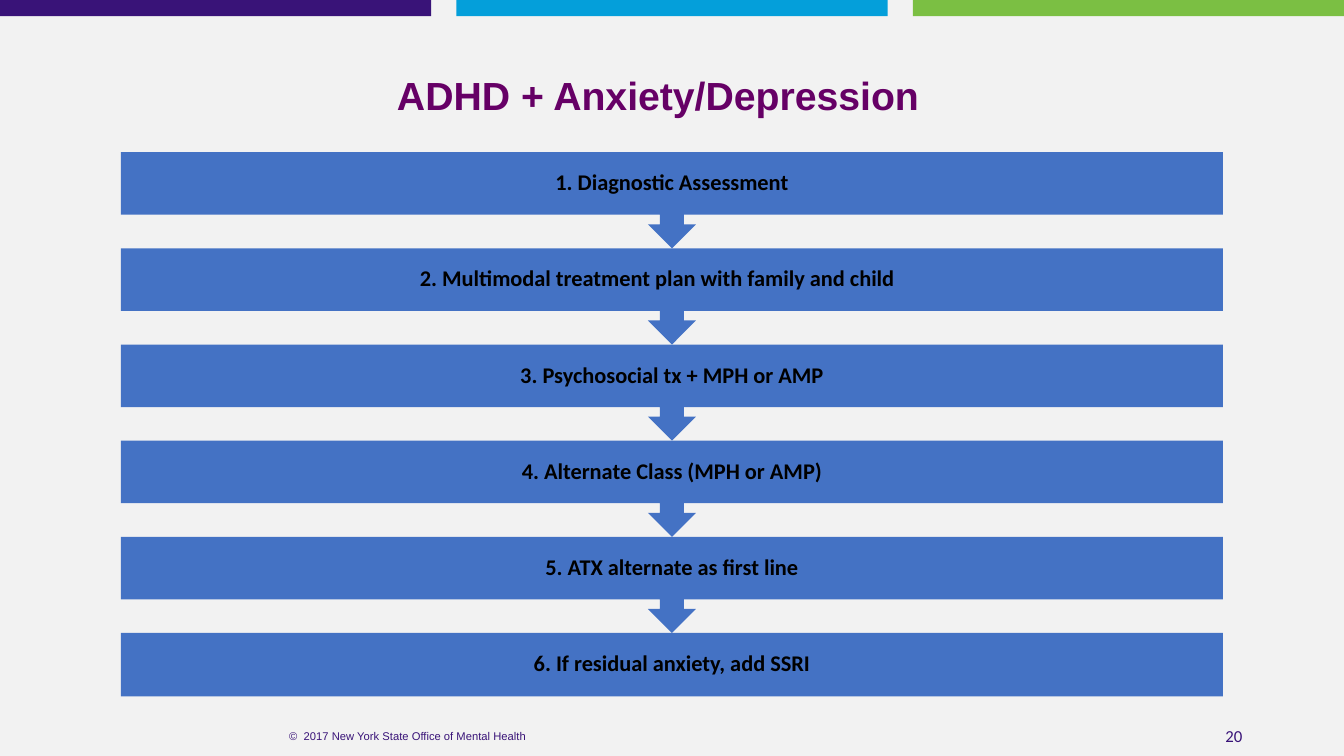
from pptx import Presentation
from pptx.dml.color import RGBColor
from pptx.enum.shapes import MSO_SHAPE
from pptx.enum.text import MSO_ANCHOR, PP_ALIGN
from pptx.util import Inches, Pt

PURPLE = RGBColor(0x39, 0x13, 0x78)
CYAN = RGBColor(0x04, 0x9F, 0xDA)
GREEN = RGBColor(0x7B, 0xBF, 0x43)
BLUE = RGBColor(0x44, 0x72, 0xC4)
PLUM = RGBColor(0x66, 0x00, 0x66)
BLACK = RGBColor(0x00, 0x00, 0x00)
PALE_GRAY = RGBColor(0xF2, 0xF2, 0xF2)

STEPS = [
    "1. Diagnostic Assessment",
    "2. Multimodal treatment plan with family and child\t",
    "3. Psychosocial tx + MPH or AMP",
    "4. Alternate Class (MPH or AMP)",
    "5. ATX alternate as first line",
    "6. If residual anxiety, add SSRI",
]


def add_block(slide, kind, left, top, width, height, color):
    """Add a flat filled shape without outline or shadow."""
    sp = slide.shapes.add_shape(
        kind, Inches(left), Inches(top), Inches(width), Inches(height))
    sp.shadow.inherit = False
    sp.fill.solid()
    sp.fill.fore_color.rgb = color
    sp.line.fill.background()
    return sp


def write(sp, text, size, color, font="Arial", bold=False,
          align=PP_ALIGN.CENTER, spacing=1.0):
    """Write one vertically centred paragraph into a shape."""
    tf = sp.text_frame
    tf.word_wrap = True
    tf.vertical_anchor = MSO_ANCHOR.MIDDLE
    p = tf.paragraphs[0]
    p.text = text
    p.alignment = align
    p.line_spacing = spacing
    for r in p.runs:
        r.font.name = font
        r.font.size = Pt(size)
        r.font.bold = bold
        r.font.color.rgb = color


def add_text(slide, left, top, width, height, text, size, color, **style):
    """Add a text box with one formatted paragraph."""
    sp = slide.shapes.add_textbox(
        Inches(left), Inches(top), Inches(width), Inches(height))
    write(sp, text, size, color, **style)


def add_top_bars(slide, width, height, gap):
    """Spread three coloured bars across the top edge."""
    colors = [PURPLE, CYAN, GREEN]
    bar = (width - gap * (len(colors) - 1)) / len(colors)
    for i, color in enumerate(colors):
        add_block(slide, MSO_SHAPE.RECTANGLE, i * (bar + gap), 0, bar, height, color)


def add_step_flow(slide, left, top, width, height, steps):
    """Stack the steps as arrow callouts that end in a plain box."""
    box = 0.63
    pitch = (height - box) / (len(steps) - 1)
    for i, step in enumerate(steps):
        last = i == len(steps) - 1
        kind = MSO_SHAPE.RECTANGLE if last else MSO_SHAPE.DOWN_ARROW_CALLOUT
        sp = add_block(slide, kind, left, top + i * pitch, width,
                       box if last else pitch, BLUE)
        tf = sp.text_frame
        tf.margin_left = tf.margin_right = Inches(0.12)
        tf.margin_top = tf.margin_bottom = Inches(0.12)
        write(sp, step, 16, BLACK, font="Calibri", bold=True, spacing=0.9)


def add_footer(slide, top, height):
    """Add the copyright line and the slide number."""
    add_text(slide, 1.81, top, 4.47, height,
             "©  2017 New York State Office of Mental Health", 8, PURPLE)
    add_text(slide, 9.42, top, 3, height, "20", 12, PURPLE,
             font="Calibri", align=PP_ALIGN.RIGHT)


def main():
    """Build the slide and save it."""
    prs = Presentation()
    prs.slide_width = Inches(13.33)
    prs.slide_height = Inches(7.5)
    s = prs.slides.add_slide(prs.slide_layouts[6])
    s.background.fill.solid()
    s.background.fill.fore_color.rgb = PALE_GRAY
    add_top_bars(s, 13.33, 0.16, 0.25)
    add_text(s, 0.92, 0.43, 11.21, 1.08, "ADHD + Anxiety/Depression", 28, PLUM,
             bold=True, spacing=0.9)
    add_step_flow(s, 1.2, 1.51, 10.93, 5.4, STEPS)
    add_footer(s, 7.1, 0.4)
    prs.save("out.pptx")


if __name__ == "__main__":
    main()
